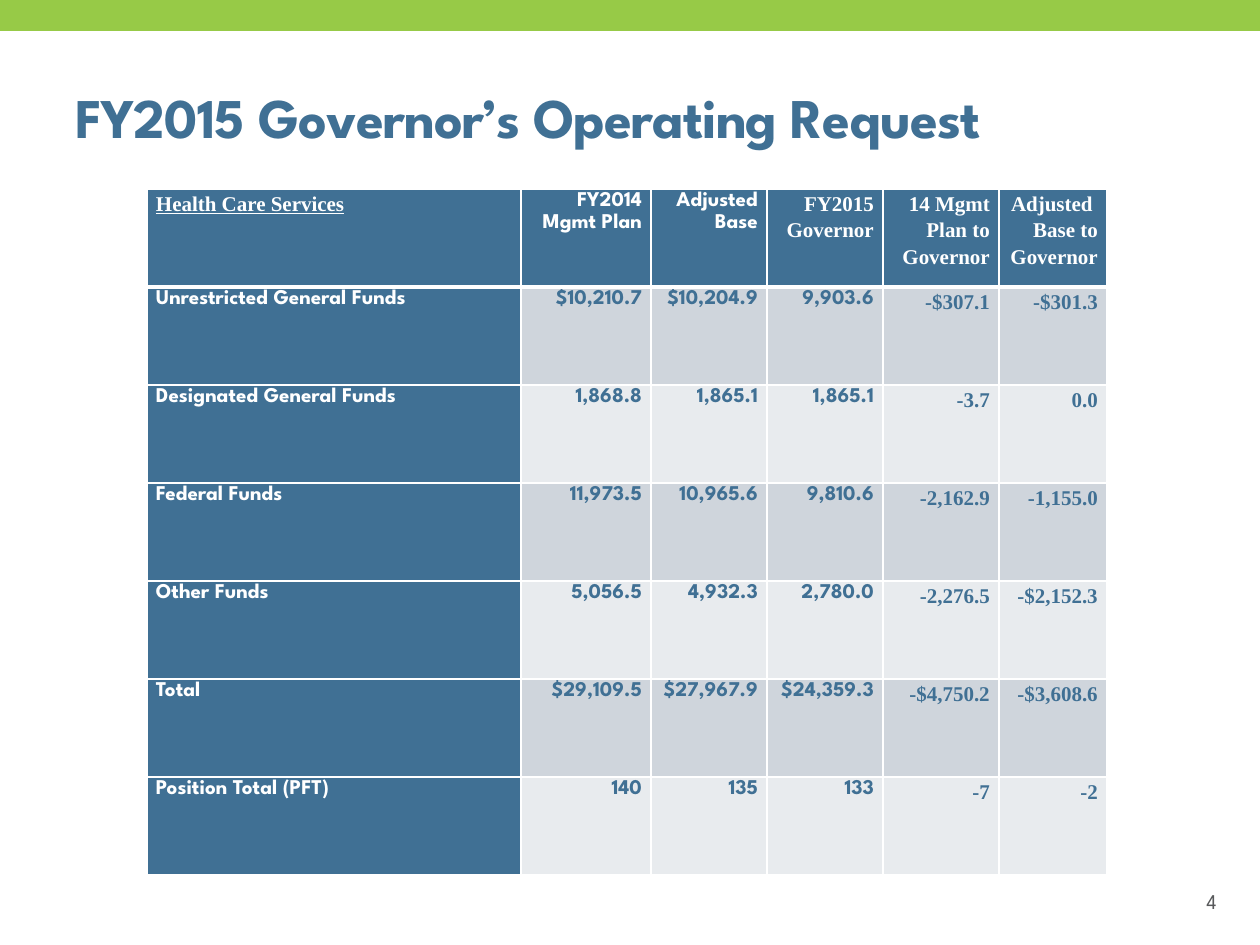
from dataclasses import dataclass
from lxml.etree import SubElement
from pptx import Presentation
from pptx.dml.color import RGBColor
from pptx.enum.shapes import MSO_SHAPE
from pptx.enum.text import MSO_ANCHOR, PP_ALIGN
from pptx.oxml.ns import qn
from pptx.util import Emu, Pt

SCALE = 914400 / 126


@dataclass(frozen=True)
class Theme:
    blue: str = "407094"
    green: str = "97CA47"
    white: str = "FFFFFF"
    gray: str = "58595B"
    dark: str = "CFD5DC"
    light: str = "E8EBEE"
    sans: str = "League Spartan"
    serif: str = "Times New Roman"
    title: int = 32
    body: int = 12


@dataclass(frozen=True)
class Box:
    left: int
    top: int
    width: int
    height: int

    def emu(self) -> list[Emu]:
        return [px(n) for n in (self.left, self.top, self.width, self.height)]


@dataclass(frozen=True)
class Col:
    head: str
    width: int
    head_font: str
    font: str


@dataclass(frozen=True)
class Fund:
    name: str
    sums: tuple[str, ...]


THEME = Theme()
GRID = Box(147, 189, 960, 686)
COLS = (
    Col("Health Care Services", 374, THEME.serif, THEME.sans),
    Col("FY2014 Mgmt Plan", 130, THEME.sans, THEME.sans),
    Col("Adjusted Base", 116, THEME.sans, THEME.sans),
    Col("FY2015 Governor", 116, THEME.serif, THEME.sans),
    Col("14 Mgmt Plan to Governor", 116, THEME.serif, THEME.serif),
    Col("Adjusted  Base to Governor", 108, THEME.serif, THEME.serif),
)
FUNDS = (
    Fund("Unrestricted General Funds", ("$10,210.7", "$10,204.9", "9,903.6", "-$307.1", "-$301.3")),
    Fund("Designated General Funds", ("1,868.8", "1,865.1", "1,865.1", "-3.7", "0.0")),
    Fund("Federal Funds", ("11,973.5", "10,965.6", "9,810.6", "-2,162.9", "-1,155.0")),
    Fund("Other Funds", ("5,056.5", "4,932.3", "2,780.0", "-2,276.5", "-$2,152.3")),
    Fund("Total", ("$29,109.5", "$27,967.9", "$24,359.3", "-$4,750.2", "-$3,608.6")),
    Fund("Position Total (PFT)", ("140", "135", "133", "-7", "-2")),
)


def px(count: int) -> Emu:
    return Emu(round(count * SCALE))


def write(frame, text: str, *, size: int = THEME.body, font: str = THEME.sans,
          color: str = THEME.blue, bold: bool = True, under: bool = False,
          align=PP_ALIGN.LEFT, lines: float | None = None, track: int = 0) -> None:
    frame.word_wrap = True
    para = frame.paragraphs[0]
    para.alignment = align
    para.line_spacing = lines
    run = para.add_run()
    run.text = text
    run.font.size = Pt(size)
    run.font.name = font
    run.font.bold = bold
    run.font.underline = under
    run.font.color.rgb = RGBColor.from_string(color)
    if track:
        run.font._element.set("spc", str(track))


def label(slide, box: Box, text: str, **style) -> None:
    frame = slide.shapes.add_textbox(*box.emu()).text_frame
    frame.vertical_anchor = MSO_ANCHOR.MIDDLE
    write(frame, text, **style)


def band(slide, box: Box, color: str) -> None:
    shape = slide.shapes.add_shape(MSO_SHAPE.RECTANGLE, *box.emu())
    shape.shadow.inherit = False
    shape.fill.solid()
    shape.fill.fore_color.rgb = RGBColor.from_string(color)
    shape.line.fill.background()


def edge(cell, top: int, base: int) -> None:
    props = cell._tc.get_or_add_tcPr()
    for spot, (side, width) in enumerate((("L", 1), ("R", 1), ("T", top), ("B", base))):
        line = SubElement(props, qn(f"a:ln{side}"), w=str(Pt(width)))
        fill = SubElement(line, qn("a:solidFill"))
        SubElement(fill, qn("a:srgbClr"), val=THEME.white)
        props.insert(spot, line)


def paint(cell, text: str, row: int, col: int) -> None:
    head, side = row == 0, col == 0
    solid = head or side
    cell.margin_left = cell.margin_right = px(9)
    cell.margin_top = cell.margin_bottom = 0
    cell.fill.solid()
    tint = THEME.blue if solid else THEME.dark if row % 2 else THEME.light
    cell.fill.fore_color.rgb = RGBColor.from_string(tint)
    edge(cell, 3 if row == 1 else 1, 3 if head else 1)
    write(cell.text_frame, text, lines=1.15, under=head and side,
          font=COLS[col].head_font if head else COLS[col].font,
          color=THEME.white if solid else THEME.blue,
          align=PP_ALIGN.LEFT if side else PP_ALIGN.RIGHT)


def grid(slide) -> None:
    rows = [tuple(col.head for col in COLS)]
    rows += [(fund.name, *fund.sums) for fund in FUNDS]
    table = slide.shapes.add_table(len(rows), len(COLS), *GRID.emu()).table
    for slot, col in zip(table.columns, COLS):
        slot.width = px(col.width)
    for r, texts in enumerate(rows):
        table.rows[r].height = px(GRID.height // len(rows))
        for c, text in enumerate(texts):
            paint(table.cell(r, c), text, r, c)


def main() -> None:
    deck = Presentation()
    deck.slide_width, deck.slide_height = px(1260), px(945)
    slide = deck.slides.add_slide(deck.slide_layouts[6])
    band(slide, Box(0, 0, 1260, 31), THEME.green)
    label(slide, Box(63, 38, 1134, 157), "FY2015 Governor’s Operating Request",
          size=THEME.title, track=-50)
    label(slide, Box(935, 876, 294, 50), "4", color=THEME.gray, bold=False,
          align=PP_ALIGN.RIGHT)
    grid(slide)
    deck.save("out.pptx")


if __name__ == "__main__":
    main()
